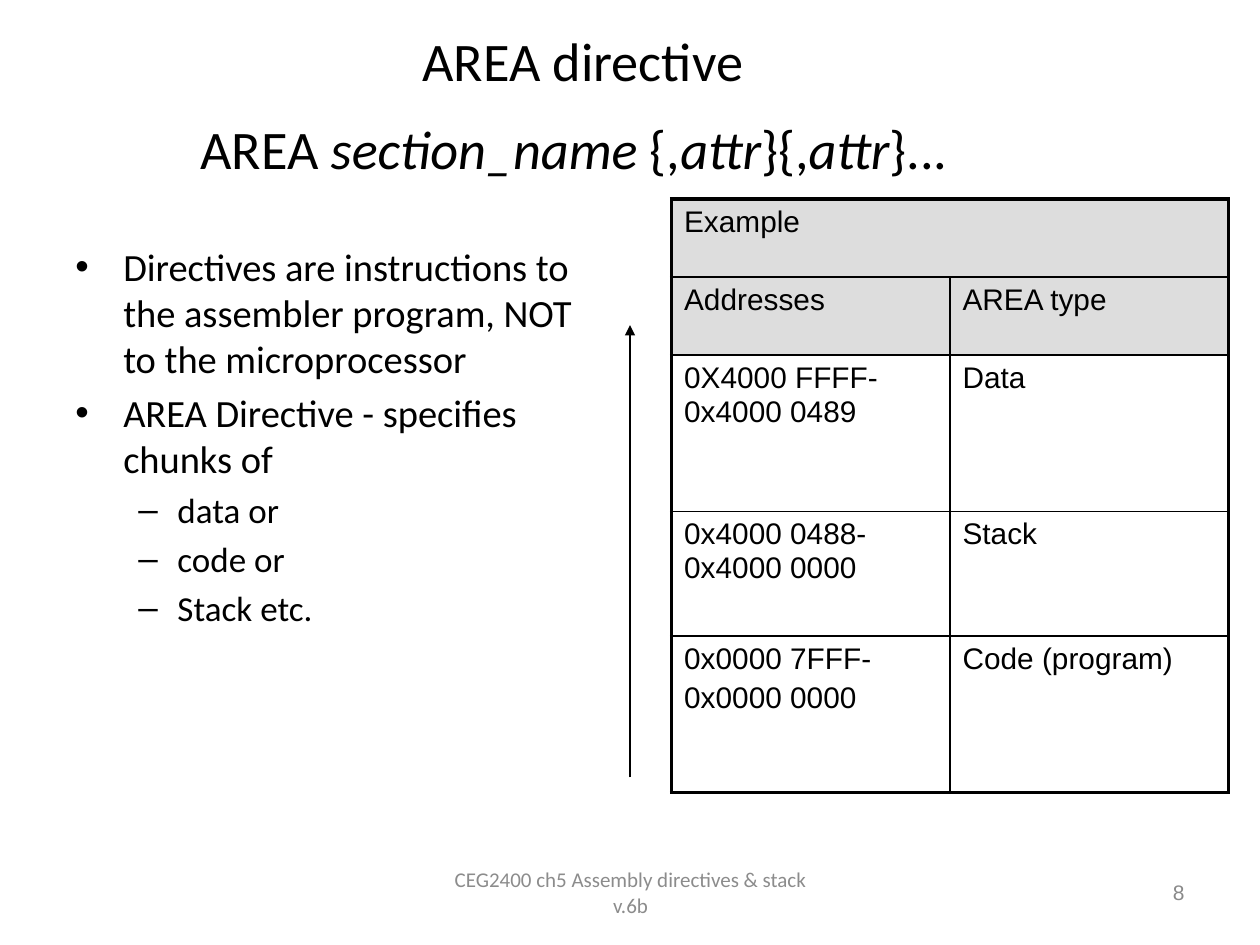
from lxml import etree
from pptx import Presentation
from pptx.dml.color import RGBColor
from pptx.enum import shapes, text
from pptx.oxml import ns
from pptx.util import Inches, Pt

COLORS = {"ink": "000000", "header": "DDDDDD", "footer": "8C8C8C", "number": "898989"}
TITLE_RUNS = [("section_name ", True), ("{,", False), ("attr", True),
              ("}{,", False), ("attr", True), ("}...", False)]
BULLETS = [
    (0, "Directives are instructions to the assembler program, NOT to the microprocessor"),
    (0, "AREA Directive - specifies chunks of"),
    (1, "data or"),
    (1, "code or"),
    (1, "Stack etc."),
]
LEVELS = [("•", 22, 0.38, 0.38), ("–", 20, 0.81, 0.31)]
ROWS = [
    (0.62, "Example", ""),
    (0.62, "Addresses", "AREA type"),
    (1.24, "0X4000 FFFF- 0x4000 0489", "Data"),
    (0.99, "0x4000 0488- 0x4000 0000", "Stack"),
    (1.24, "0x0000 7FFF-\n0x0000 0000", "Code (program)"),
]


def rgb(name):
    """Return the named colour."""
    return RGBColor.from_string(COLORS[name])


def style(p, size, font="Calibri", color="ink"):
    """Format every run of a paragraph."""
    for r in p.runs:
        r.font.size = Pt(size)
        r.font.name = font
        r.font.color.rgb = rgb(color)


def add_title(s):
    """Fill the title placeholder with the directive and its syntax."""
    sp = s.shapes.title
    sp.left, sp.top, sp.width, sp.height = [Inches(v) for v in (0.5, 0.13, 8.25, 1.42)]
    tf = sp.text_frame
    tf.auto_size = text.MSO_AUTO_SIZE.NONE
    tf.vertical_anchor = text.MSO_ANCHOR.MIDDLE
    p = tf.paragraphs[0]
    p.text = "AREA directive\vAREA "
    p.alignment = text.PP_ALIGN.CENTER
    for words, italic in TITLE_RUNS:
        r = p.add_run()
        r.text = words
        r.font.italic = italic
    style(p, 31)
    r = p.add_run()
    r.text = " "
    r.font.size = Pt(44)


def add_text(s, box, words):
    """Add a wrapping text box and return its text frame."""
    tf = s.shapes.add_textbox(*[Inches(v) for v in box]).text_frame
    tf.word_wrap = True
    tf.text = words
    return tf


def add_bullets(s):
    """Add the two-level bullet list."""
    tf = add_text(s, (0.5, 1.88, 4.42, 4.82), "\n".join(words for _, words in BULLETS))
    for p, (level, _) in zip(tf.paragraphs, BULLETS):
        mark, size, margin, hang = LEVELS[level]
        p.level = level
        p.space_before = Pt(size * 0.2)
        style(p, size)
        pPr = p._p.get_or_add_pPr()
        pPr.set("marL", str(Inches(margin)))
        pPr.set("indent", str(-Inches(hang)))
        etree.SubElement(pPr, ns.qn("a:buFont")).set("typeface", "Arial")
        etree.SubElement(pPr, ns.qn("a:buChar")).set("char", mark)


def add_footer(s, box, words, align, font, color):
    """Add one small footer text."""
    tf = add_text(s, box, words)
    tf.vertical_anchor = text.MSO_ANCHOR.MIDDLE
    tf.paragraphs[0].alignment = align
    style(tf.paragraphs[0], 12, font, color)


def set_borders(cell, outer):
    """Draw the cell borders, heavier on the outer sides."""
    tcPr = cell._tc.get_or_add_tcPr()
    for i, side in enumerate("LRTB"):
        ln = etree.Element(ns.qn(f"a:ln{side}"), w=str(Pt(2.25 if side in outer else 1)))
        fill = etree.SubElement(ln, ns.qn("a:solidFill"))
        etree.SubElement(fill, ns.qn("a:srgbClr")).set("val", COLORS["ink"])
        tcPr.insert(i, ln)


def fill_cell(cell, words, header, outer):
    """Write and format one table cell."""
    cell.text = words
    for p in cell.text_frame.paragraphs:
        p.space_before = Pt(3.4)
        style(p, 17, "Arial")
    if header:
        cell.fill.solid()
        cell.fill.fore_color.rgb = rgb("header")
    else:
        cell.fill.background()
    set_borders(cell, outer)


def add_memory_table(s):
    """Add the table of addresses and area types."""
    box = [Inches(v) for v in (5.33, 1.58, 4.42, 4.71)]
    table = s.shapes.add_table(len(ROWS), 2, *box).table
    table.first_row = table.horz_banding = False
    last = len(ROWS) - 1
    for i, (height, *labels) in enumerate(ROWS):
        table.rows[i].height = Inches(height)
        for j, words in enumerate(labels):
            outer = "LR"[j] + ("T" if i == 0 else "B" if i == last else "")
            if i == 0:
                outer = "LRT"
            fill_cell(table.cell(i, j), words, i < 2, outer)
    table.cell(0, 0).merge(table.cell(0, 1))


def add_arrow(s):
    """Add the arrow pointing to higher addresses."""
    ends = [Inches(v) for v in (5, 6.17, 5, 2.58)]
    line = s.shapes.add_connector(shapes.MSO_CONNECTOR.STRAIGHT, *ends)
    line.line.color.rgb = rgb("ink")
    line.line.width = Pt(0.75)
    etree.SubElement(line.line._get_or_add_ln(), ns.qn("a:tailEnd")).set("type", "triangle")
    etree.SubElement(line._element.spPr, ns.qn("a:effectLst"))


def main():
    """Build the slide and save it."""
    prs = Presentation()
    prs.slide_width, prs.slide_height = Inches(10), Inches(7.5)
    s = prs.slides.add_slide(prs.slide_layouts[5])
    add_title(s)
    add_bullets(s)
    add_memory_table(s)
    add_footer(s, (3.42, 6.83, 3.17, 0.5), "CEG2400 ch5 Assembly directives & stack v.6b",
               text.PP_ALIGN.CENTER, "Calibri", "footer")
    add_footer(s, (7.17, 6.83, 2.33, 0.5), "8", text.PP_ALIGN.RIGHT, "Arial", "number")
    add_arrow(s)
    prs.save("out.pptx")


if __name__ == "__main__":
    main()
